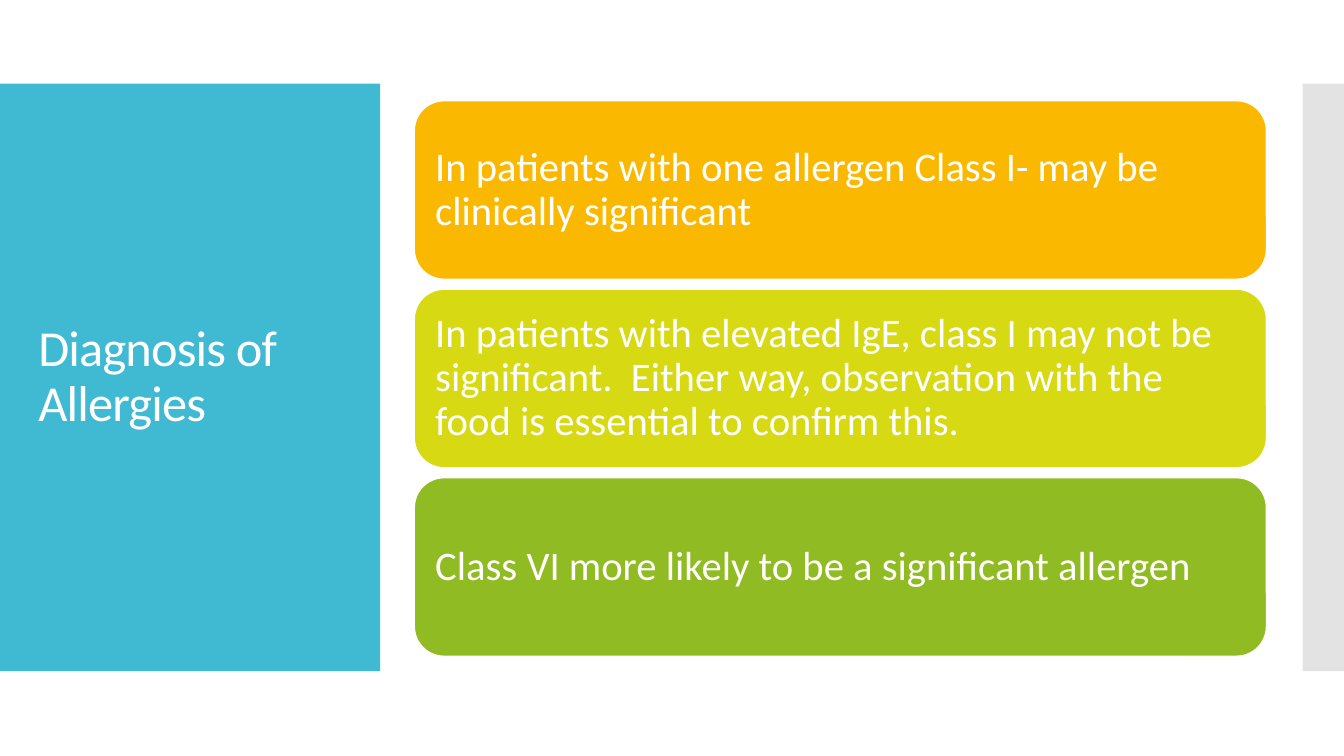
from lxml.etree import SubElement
from pptx import Presentation
from pptx.dml.color import RGBColor
from pptx.enum.shapes import MSO_SHAPE as Preset
from pptx.enum.text import MSO_ANCHOR as Anchor, PP_ALIGN as Align
from pptx.oxml.ns import qn
from pptx.util import Inches, Pt

WHITE = RGBColor(0xFF, 0xFF, 0xFF)
TEAL = RGBColor(0x40, 0xBA, 0xD2)
GREY = RGBColor(0xC8, 0xC8, 0xC8)
AMBER = RGBColor(0xFA, 0xB9, 0x00)
LIME = RGBColor(0xD7, 0xD9, 0x13)
GREEN = RGBColor(0x90, 0xBB, 0x23)

BAND_TOP, BAND_HEIGHT = 0.83, 5.83
CARD_LEFT, CARD_TOP = 4.11, 1
CARD_WIDTH, CARD_HEIGHT = 8.45, 1.77
CARD_PITCH = CARD_HEIGHT + 0.1

FINDINGS = [
    ("In patients with one allergen Class I- may be clinically significant", AMBER),
    ("In patients with elevated IgE, class I may not be significant.  Either way, "
     "observation with the food is essential to confirm this.", LIME),
    ("Class VI more likely to be a significant allergen", GREEN),
]


def add_block(preset, left, top, width, height, color):
    block = slide.shapes.add_shape(
        preset, Inches(left), Inches(top), Inches(width), Inches(height))
    block.shadow.inherit = False
    block.fill.solid()
    block.fill.fore_color.rgb = color
    block.line.fill.background()
    return block


def write_text(frame, text, size):
    frame.word_wrap = True
    frame.vertical_anchor = Anchor.MIDDLE
    frame.text = text
    paragraph = frame.paragraphs[0]
    paragraph.alignment = Align.LEFT
    paragraph.line_spacing = 0.9
    paragraph.font.name = "Calibri"
    paragraph.font.size = Pt(size)
    paragraph.font.color.rgb = WHITE


deck = Presentation()
deck.slide_width, deck.slide_height = Inches(13.33), Inches(7.5)
slide = deck.slides.add_slide(deck.slide_layouts[5])

add_block(Preset.RECTANGLE, 0, BAND_TOP, 3.77, BAND_HEIGHT, TEAL)
side_band = add_block(Preset.RECTANGLE, 12.92, BAND_TOP, 0.41, BAND_HEIGHT, GREY)
band_color = side_band.fill._xPr.find(qn("a:solidFill"))[0]
SubElement(band_color, qn("a:alpha"), val="50000")

title = slide.shapes.title
title.left, title.top = Inches(0.28), Inches(1.23)
title.width, title.height = Inches(3.22), Inches(5.03)
write_text(title.text_frame, "Diagnosis of Allergies", 36)
title.text_frame.paragraphs[0].runs[0]._r.get_or_add_rPr().set("spc", "-60")
title._element.getparent().append(title._element)

for row, (finding, color) in enumerate(FINDINGS):
    card = add_block(Preset.ROUNDED_RECTANGLE, CARD_LEFT, CARD_TOP + row * CARD_PITCH,
                     CARD_WIDTH, CARD_HEIGHT, color)
    card.line.color.rgb = WHITE
    card.line.width = Pt(0.85)
    frame = card.text_frame
    frame.margin_left = frame.margin_right = Inches(0.12)
    frame.margin_top = frame.margin_bottom = Inches(0.12)
    write_text(frame, finding, 29)

deck.save("out.pptx")
